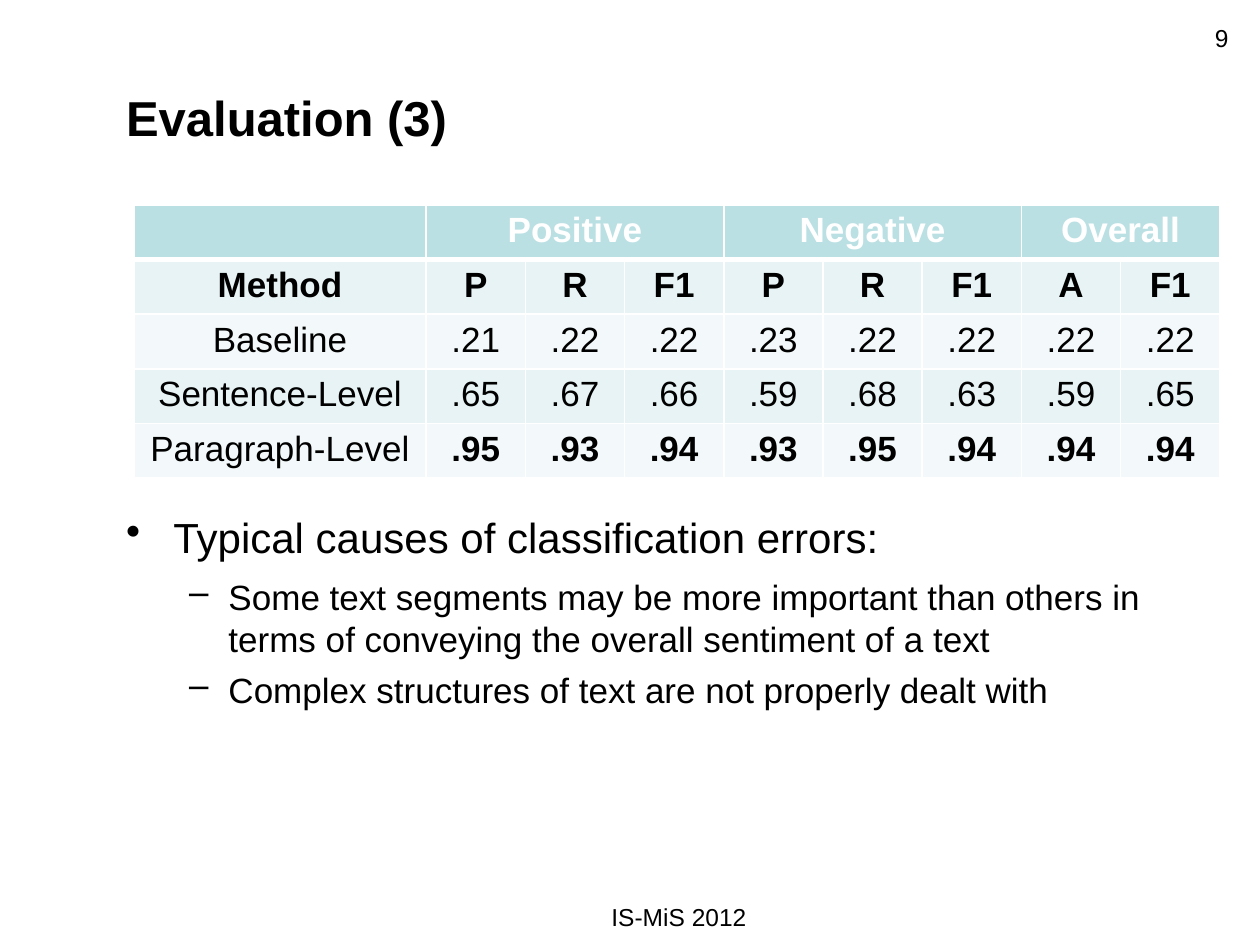
from lxml import etree
from pptx import Presentation
from pptx.dml.color import RGBColor
from pptx.enum.text import MSO_ANCHOR, PP_ALIGN
from pptx.oxml.ns import qn
from pptx.util import Pt

LEFT, CENTER, RIGHT = PP_ALIGN.LEFT, PP_ALIGN.CENTER, PP_ALIGN.RIGHT
TOP, MIDDLE = MSO_ANCHOR.TOP, MSO_ANCHOR.MIDDLE
BLACK = RGBColor(0x00, 0x00, 0x00)
WHITE = RGBColor(0xFF, 0xFF, 0xFF)
HEADER = RGBColor(0xBB, 0xE0, 0xE3)
BANDS = [RGBColor(0xE7, 0xF3, 0xF4), RGBColor(0xF3, 0xF9, 0xFA)]

TITLE = "Evaluation (3)"
FOOTER = "IS-MiS 2012"
NUMBER = "9"
GROUPS = [("", 1), ("Positive", 3), ("Negative", 3), ("Overall", 2)]
ROWS = [
    ["Method", "P", "R", "F1", "P", "R", "F1", "A", "F1"],
    ["Baseline", ".21", ".22", ".22", ".23", ".22", ".22", ".22", ".22"],
    ["Sentence-Level", ".65", ".67", ".66", ".59", ".68", ".63", ".59", ".65"],
    ["Paragraph-Level", ".95", ".93", ".94", ".93", ".95", ".94", ".94", ".94"],
]
BULLETS = [
    ("Typical causes of classification errors:", 0, 0),
    ("Some text segments may be more important than others in terms of "
     "conveying the overall sentiment of a text", 1, 8),
    ("Complex structures of text are not properly dealt with", 1, 5),
]
LEVELS = [
    {"bullet": "•", "margin": 27, "indent": -27, "size": 24},
    {"bullet": "–", "margin": 58.5, "indent": -22.5, "size": 20},
]
METHOD_W, SCORE_W, ROW_H = 167, 56.7, 29.5


def write(p, text, size=20, color=BLACK, bold=False, align=LEFT, before=0,
          bullet=None, margin=0, indent=0):
    if bullet:
        pPr = p._p.get_or_add_pPr()
        pPr.set("marL", str(Pt(margin)))
        pPr.set("indent", str(Pt(indent)))
        etree.SubElement(pPr, qn("a:buChar")).set("char", bullet)
    p.alignment = align
    p.space_before = Pt(before)
    r = p.add_run()
    r.text = text
    r.font.name = "Arial"
    r.font.size = Pt(size)
    r.font.bold = bold
    r.font.color.rgb = color


def add_box(s, x, y, w, h, anchor=TOP):
    tf = s.shapes.add_textbox(Pt(x), Pt(y), Pt(w), Pt(h)).text_frame
    tf.word_wrap = True
    tf.vertical_anchor = anchor
    return tf


def style_cell(cell, fill, top=1, bottom=1):
    tcPr = cell._tc.get_or_add_tcPr()
    for side, width in (("L", 1), ("R", 1), ("T", top), ("B", bottom)):
        ln = etree.SubElement(tcPr, qn("a:ln" + side), w=str(Pt(width)))
        solid = etree.SubElement(ln, qn("a:solidFill"))
        etree.SubElement(solid, qn("a:srgbClr"), val=str(WHITE))
    cell.fill.solid()
    cell.fill.fore_color.rgb = fill


def add_scores(s):
    rows, cols = len(ROWS) + 1, len(ROWS[0])
    width = METHOD_W + SCORE_W * (cols - 1)
    table = s.shapes.add_table(rows, cols, Pt(76.5), Pt(117), Pt(width),
                               Pt(ROW_H * rows)).table
    for i, col in enumerate(table.columns):
        col.width = Pt(SCORE_W if i else METHOD_W)
    for row in table.rows:
        row.height = Pt(ROW_H)
    for c in range(cols):
        style_cell(table.cell(0, c), HEADER, bottom=3)
    start = 0
    for text, span in GROUPS:
        cell = table.cell(0, start)
        if span > 1:
            cell.merge(table.cell(0, start + span - 1))
        if text:
            write(cell.text_frame.paragraphs[0], text, color=WHITE, bold=True,
                  align=CENTER)
        start += span
    for i, values in enumerate(ROWS):
        for c, text in enumerate(values):
            cell = table.cell(i + 1, c)
            style_cell(cell, BANDS[i % 2], top=1 if i else 3)
            bold = i == 0 or (i == len(ROWS) - 1 and c > 0)
            write(cell.text_frame.paragraphs[0], text, bold=bold, align=CENTER)


def main():
    prs = Presentation()
    prs.slide_width, prs.slide_height = Pt(720), Pt(540)
    s = prs.slides.add_slide(prs.slide_layouts[6])

    title = add_box(s, 65, 21.6, 619, 90, MIDDLE)
    write(title.paragraphs[0], TITLE, size=28, bold=True)

    body = add_box(s, 65, 288.5, 626, 214)
    for i, (text, level, before) in enumerate(BULLETS):
        p = body.add_paragraph() if i else body.paragraphs[0]
        p.level = level
        write(p, text, before=before, **LEVELS[level])

    footer = add_box(s, 62, 512, 652, 17.5)
    write(footer.paragraphs[0], FOOTER, size=14, align=CENTER)
    number = add_box(s, 660, 9.5, 49, 37.5)
    write(number.paragraphs[0], NUMBER, size=14, align=RIGHT)

    add_scores(s)
    prs.save("out.pptx")


if __name__ == "__main__":
    main()
